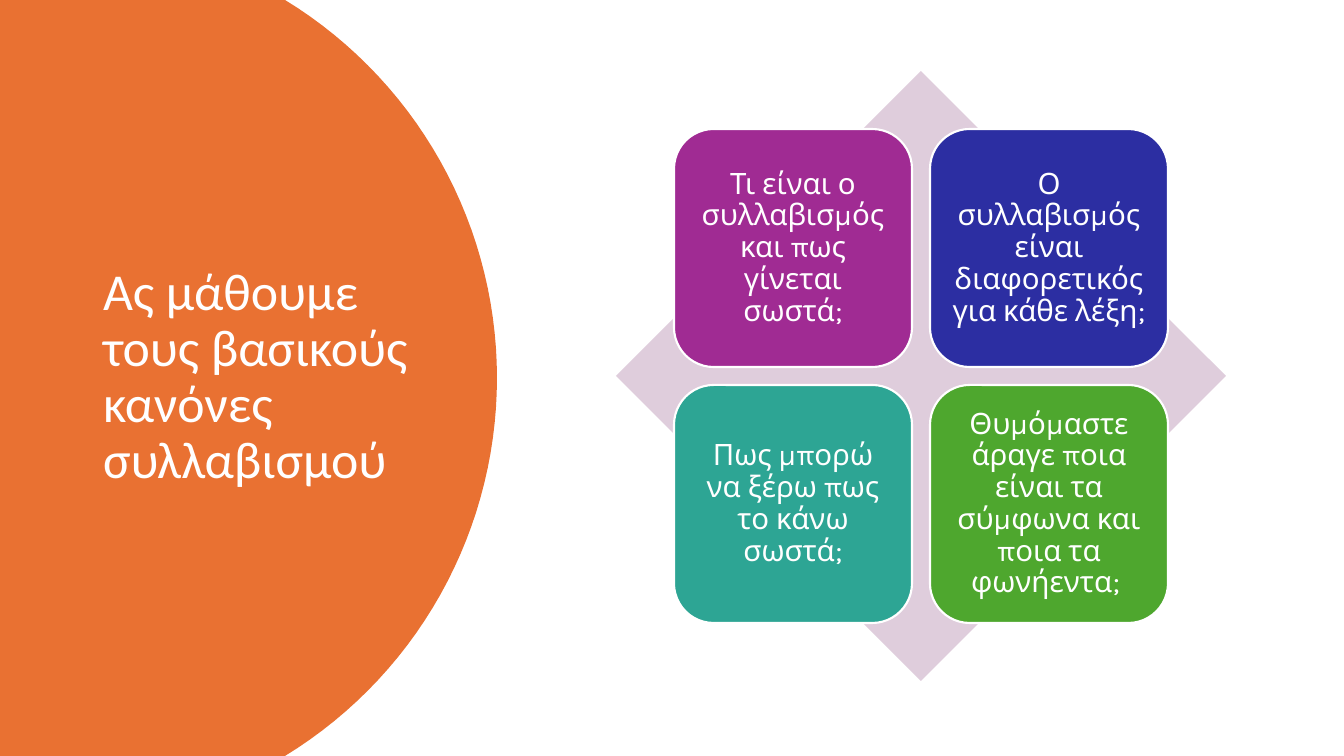
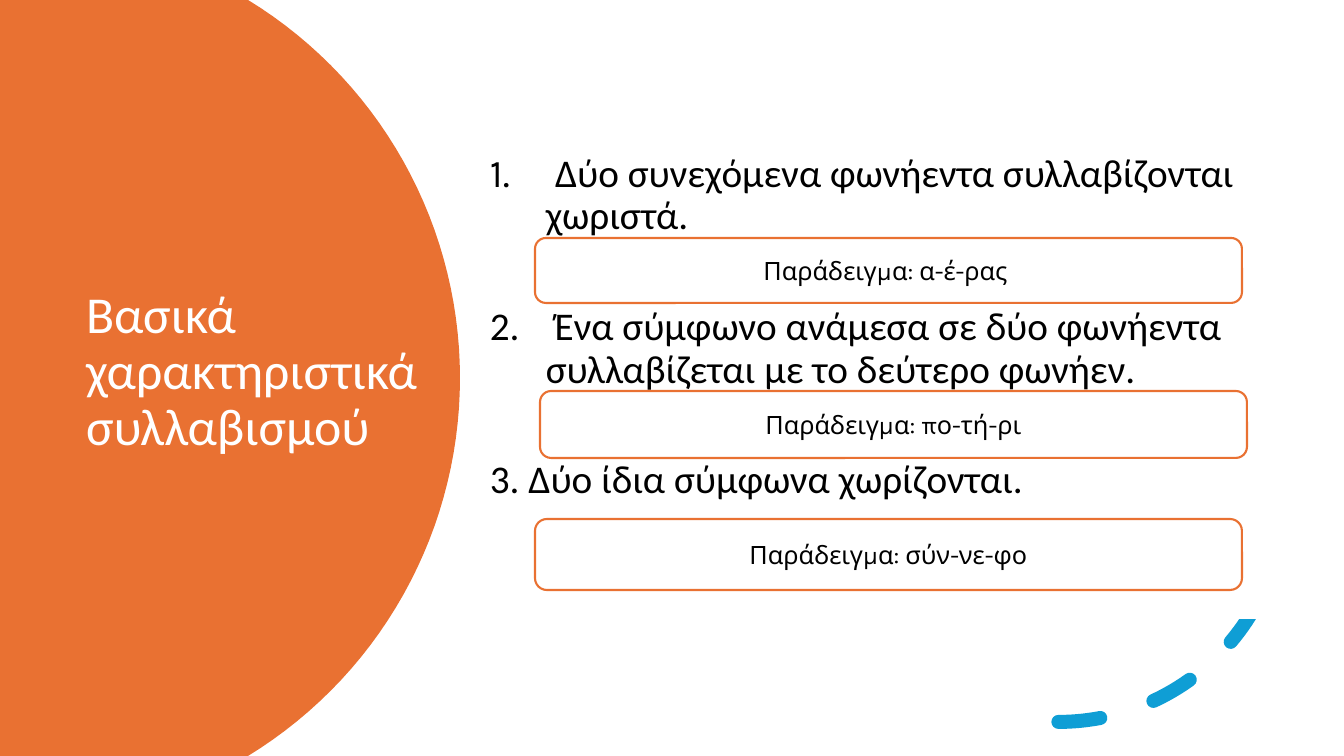
import math
from dataclasses import dataclass

import pptx
import pptx.dml.color
import pptx.enum.dml
import pptx.enum.shapes
import pptx.enum.text
import pptx.oxml
import pptx.util

SHAPE = pptx.enum.shapes.MSO_SHAPE
ALIGN = pptx.enum.text.PP_ALIGN
MIDDLE = pptx.enum.text.MSO_ANCHOR.MIDDLE

PX_PER_INCH = 100.8
PAGE_WIDTH, PAGE_HEIGHT = 1344, 756
TITLE_ONLY = 5


@dataclass(frozen=True)
class Theme:
    orange: str = "E97132"
    white: str = "FFFFFF"
    black: str = "000000"
    pale: str = "DFCDDC"
    blue: str = "0F9ED5"
    tiles: tuple = ("A02B93", "2C2EA2", "2DA594", "4EA72E")
    title_font: str = "Calibri"
    body_font: str = "Karla"
    title_size: int = 37
    rule_size: int = 28
    tile_size: int = 21
    example_size: int = 18
    outline: float = 1.5
    tight: float = 0.9


THEME = Theme()

QUESTIONS = (
    "Τι είναι ο συλλαβισμός και πως γίνεται σωστά;",
    "Ο συλλαβισμός είναι διαφορετικός για κάθε λέξη;",
    "Πως μπορώ να ξέρω πως το κάνω σωστά;",
    "Θυμόμαστε άραγε ποια είναι τα σύμφωνα και ποια τα φωνήεντα; ",
)

# Each rule: runs of (text, font), whether it is auto-numbered.
RULES = (
    (((" ", THEME.body_font),
      ("Δύο συνεχόμενα φωνήεντα συλλαβίζονται χωριστά.", THEME.title_font)), True),
    (((" Ένα σύμφωνο ανάμεσα σε δύο φωνήεντα συλλαβίζεται με το δεύτερο φωνήεν.",
       THEME.title_font),), True),
    ((("3. Δύο ίδια σύμφωνα χωρίζονται.", THEME.title_font),), False),
)

EXAMPLES = (
    ("Παράδειγμα: α-έ-ρας ", (535, 238, 707, 65)),
    ("Παράδειγμα: πο-τή-ρι", (540, 391, 707, 67)),
    ("Παράδειγμα: σύν-νε-φο", (535, 519, 707, 71)),
)


def px(value):
    return pptx.util.Emu(round(value * 914400 / PX_PER_INCH))


def rgb(code):
    return pptx.dml.color.RGBColor.from_string(code)


def apply(target, **values):
    for name, value in values.items():
        setattr(target, name, value)


def paint(shape, fill=None, line=None, width=THEME.outline):
    """Set fill and outline, leaving out whichever has no colour."""
    shape.shadow.inherit = False
    if fill:
        shape.fill.solid()
        shape.fill.fore_color.rgb = rgb(fill)
    else:
        shape.fill.background()
    if line:
        shape.line.color.rgb = rgb(line)
        shape.line.width = pptx.util.Pt(width)
    else:
        shape.line.fill.background()


def add_figure(page, kind, box, **colours):
    figure = page.shapes.add_shape(kind, *map(px, box))
    paint(figure, **colours)
    return figure


def add_span(para, text, font, size, colour):
    span = para.add_run()
    span.text = text
    apply(span.font, name=font, size=pptx.util.Pt(size))
    span.font.color.rgb = rgb(colour)


def write(shape, text, font, size, colour, align, spacing=1.0):
    """Put one vertically centred paragraph into a shape."""
    apply(shape.text_frame, word_wrap=True, vertical_anchor=MIDDLE,
          auto_size=pptx.enum.text.MSO_AUTO_SIZE.NONE)
    para = shape.text_frame.paragraphs[0]
    apply(para, alignment=align, line_spacing=spacing)
    add_span(para, text, font, size, colour)


def add_side_panel(page, right, radius=443, steps=60):
    """Fill the left side up to a circular edge that reaches x = right."""
    centre_x, centre_y = right - radius, PAGE_HEIGHT / 2
    reach = math.asin(centre_y / radius)
    angles = [reach * (2 * step / steps - 1) for step in range(steps + 1)]
    edge = [(px(centre_x + radius * math.cos(a)), px(centre_y + radius * math.sin(a)))
            for a in angles]
    outline = page.shapes.build_freeform(0, 0)
    outline.add_line_segments(edge + [(0, px(PAGE_HEIGHT))], close=True)
    paint(outline.convert_to_shape(), fill=THEME.orange)


def add_titled_page(deck, title, box, panel_right):
    page = deck.slides.add_slide(deck.slide_layouts[TITLE_ONLY])
    add_side_panel(page, panel_right)
    holder = page.shapes.title
    left, top, width, height = map(px, box)
    apply(holder, left=left, top=top, width=width, height=height)
    write(holder, title, THEME.title_font, THEME.title_size, THEME.white,
          ALIGN.LEFT, THEME.tight)
    # The title belongs in front of the panel.
    page.shapes._spTree.append(holder._element)
    return page


def add_question_grid(page, left=674, top=129, side=238, step=256, inset=9):
    add_figure(page, SHAPE.DIAMOND, (616, 71, 610, 610), fill=THEME.pale)
    for index, (question, colour) in enumerate(zip(QUESTIONS, THEME.tiles)):
        row, column = divmod(index, 2)
        box = (left + column * step, top + row * step, side, side)
        tile = add_figure(page, SHAPE.ROUNDED_RECTANGLE, box, fill=colour, line=THEME.white)
        apply(tile.text_frame, **{f"margin_{edge}": px(inset)
                                  for edge in ("left", "top", "right", "bottom")})
        write(tile, question, THEME.body_font, THEME.tile_size, THEME.white,
              ALIGN.CENTER, THEME.tight)


def add_dashed_arc(page):
    arc = add_figure(page, SHAPE.ARC, (833, 271, 451, 451), line=THEME.blue, width=10)
    arc.line.dash_style = pptx.enum.dml.MSO_LINE.DASH
    arc.line._get_or_add_ln().set("cap", "rnd")
    arc._element.spPr.xfrm.set("flipV", "1")


def number(para, indent=56):
    properties = para._p.get_or_add_pPr()
    properties.set("marL", str(px(indent)))
    properties.set("indent", str(px(-indent)))
    properties.append(pptx.oxml.parse_xml(
        '<a:buAutoNum xmlns:a="http://schemas.openxmlformats.org/drawingml/2006/main"'
        ' type="arabicPeriod"/>'))


def add_rules(page, gap=49):
    body = page.shapes.add_textbox(*map(px, (480, 37, 828, 582)))
    paint(body, fill=THEME.white)
    frame = body.text_frame
    apply(frame, word_wrap=True, vertical_anchor=MIDDLE)
    for index, (spans, numbered) in enumerate(RULES):
        para = frame.add_paragraph() if index else frame.paragraphs[0]
        apply(para, line_spacing=THEME.tight, space_before=pptx.util.Pt(gap if index else 0))
        if numbered:
            number(para)
        for text, font in spans:
            add_span(para, text, font, THEME.rule_size, THEME.black)


def add_examples(page):
    for text, box in EXAMPLES:
        example = add_figure(page, SHAPE.ROUNDED_RECTANGLE, box,
                             fill=THEME.white, line=THEME.orange)
        write(example, text, THEME.body_font, THEME.example_size, THEME.black, ALIGN.CENTER)


def main():
    deck = pptx.Presentation()
    apply(deck, slide_width=px(PAGE_WIDTH), slide_height=px(PAGE_HEIGHT))

    questions = add_titled_page(deck, "Ας μάθουμε τους βασικούς κανόνες συλλαβισμού",
                                (93, 71, 326, 614), panel_right=497)
    add_question_grid(questions)

    rules = add_titled_page(deck, "Βασικά χαρακτηριστικά συλλαβισμού",
                            (76, 127, 353, 492), panel_right=460)
    add_dashed_arc(rules)
    add_rules(rules)
    add_examples(rules)

    deck.save("out.pptx")


if __name__ == "__main__":
    main()
